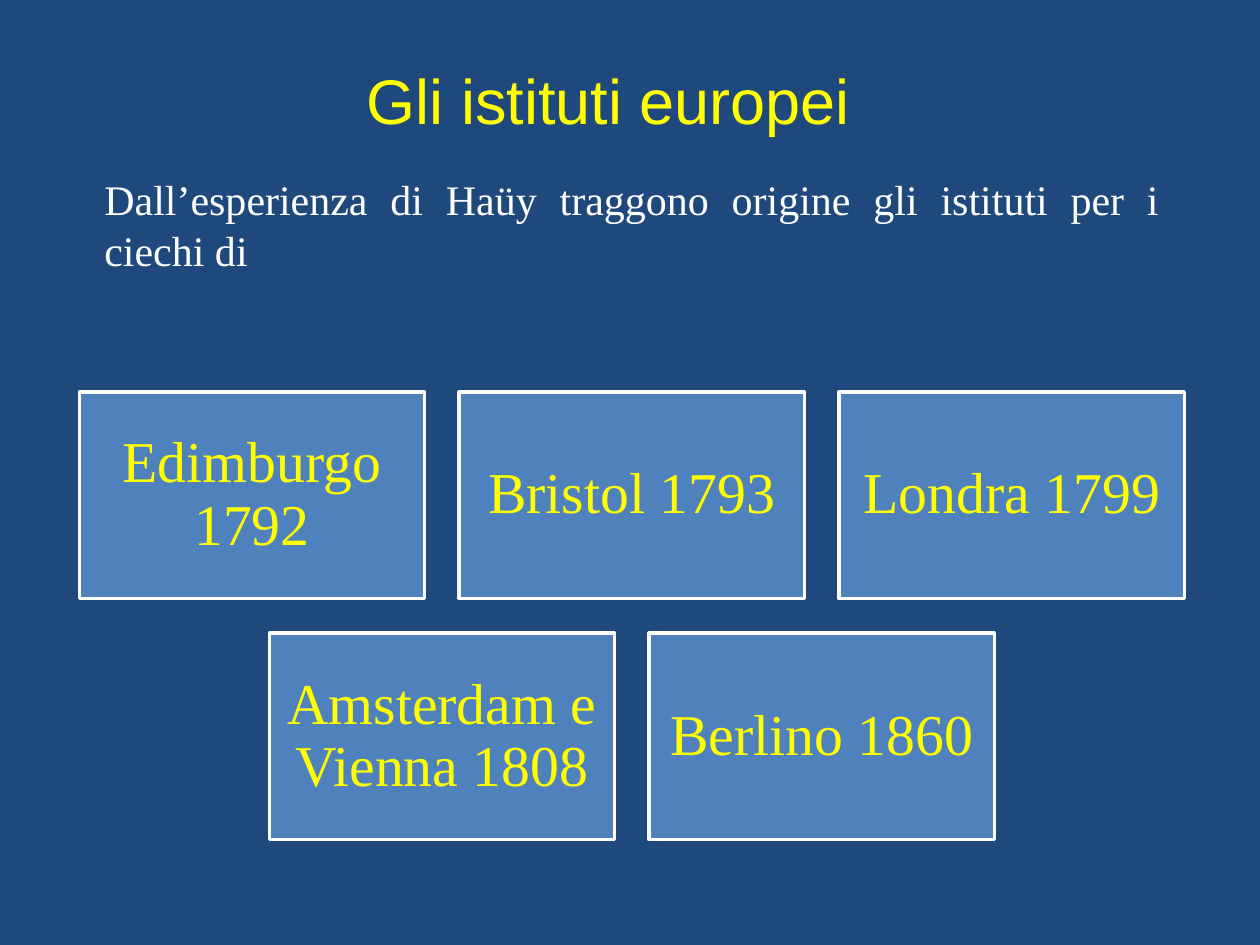
from pptx import Presentation
from pptx.dml.color import RGBColor
from pptx.enum.shapes import MSO_SHAPE as Shape
from pptx.enum.text import MSO_ANCHOR as Anchor, PP_ALIGN as Align
from pptx.util import Inches, Pt

NAVY, BLUE, YELLOW, WHITE = "1F497D", "4F81BD", "FFFF00", "FFFFFF"
SERIF = "Times New Roman"
CITY_ROWS = [
    ["Edimburgo 1792", "Bristol 1793", "Londra 1799"],
    ["Amsterdam e Vienna 1808", "Berlino 1860"],
]
CARD_WIDTH, CARD_HEIGHT = Inches(2.74), Inches(1.64)


def color(hex_value):
    return RGBColor.from_string(hex_value)


def set_text(shape, text, font_color, frame_format, paragraph_format, font_format):
    frame = shape.text_frame
    frame.word_wrap = True
    paragraph = frame.paragraphs[0]
    run = paragraph.add_run()
    run.text = text
    run.font.color.rgb = color(font_color)
    for target, values in (
        (frame, frame_format),
        (paragraph, paragraph_format),
        (run.font, font_format),
    ):
        for name, value in values.items():
            setattr(target, name, value)


def add_title(slide, left, top, width, height):
    title = slide.shapes.add_textbox(left, top, width, height)
    set_text(title, "Gli istituti europei ", YELLOW,
             {"vertical_anchor": Anchor.MIDDLE},
             {"alignment": Align.CENTER},
             {"name": "Arial", "size": Pt(36)})


def add_introduction(slide, left, top, width, height):
    introduction = slide.shapes.add_textbox(left, top, width, height)
    set_text(introduction,
             "Dall’esperienza di Haüy traggono origine gli istituti per i ciechi di",
             WHITE, {}, {"alignment": Align.JUSTIFY},
             {"name": SERIF, "size": Pt(24)})


def add_city_card(slide, text, left, top):
    card = slide.shapes.add_shape(Shape.RECTANGLE, left, top, CARD_WIDTH, CARD_HEIGHT)
    card.shadow.inherit = False
    card.fill.solid()
    card.fill.fore_color.rgb = color(BLUE)
    card.line.color.rgb = color(WHITE)
    card.line.width = Pt(2)
    margins = {f"margin_{side}": Inches(0.14)
               for side in ("left", "top", "right", "bottom")}
    set_text(card, text, YELLOW,
             {"vertical_anchor": Anchor.MIDDLE, **margins},
             {"alignment": Align.CENTER, "line_spacing": 0.9},
             {"name": SERIF, "size": Pt(33)})


def add_city_grid(slide, left, top, width):
    """Spread the first row over the width and centre shorter rows under it."""
    columns = len(CITY_ROWS[0])
    gap = (width - columns * CARD_WIDTH) // (columns - 1)
    for row, cities in enumerate(CITY_ROWS):
        row_width = len(cities) * (CARD_WIDTH + gap) - gap
        row_left = left + (width - row_width) // 2
        for column, city in enumerate(cities):
            add_city_card(slide, city,
                          row_left + column * (CARD_WIDTH + gap),
                          top + row * (CARD_HEIGHT + gap))


def main():
    presentation = Presentation()
    presentation.slide_width, presentation.slide_height = Inches(10), Inches(7.5)
    slide = presentation.slides.add_slide(presentation.slide_layouts[6])
    slide.background.fill.solid()
    slide.background.fill.fore_color.rgb = color(NAVY)
    add_title(slide, Inches(0.4), Inches(0.25), Inches(9), Inches(1.08))
    add_city_grid(slide, Inches(0.63), Inches(3.11), Inches(8.77))
    add_introduction(slide, Inches(0.73), Inches(1.33), Inches(8.57), Inches(0.91))
    presentation.save("out.pptx")


if __name__ == "__main__":
    main()
